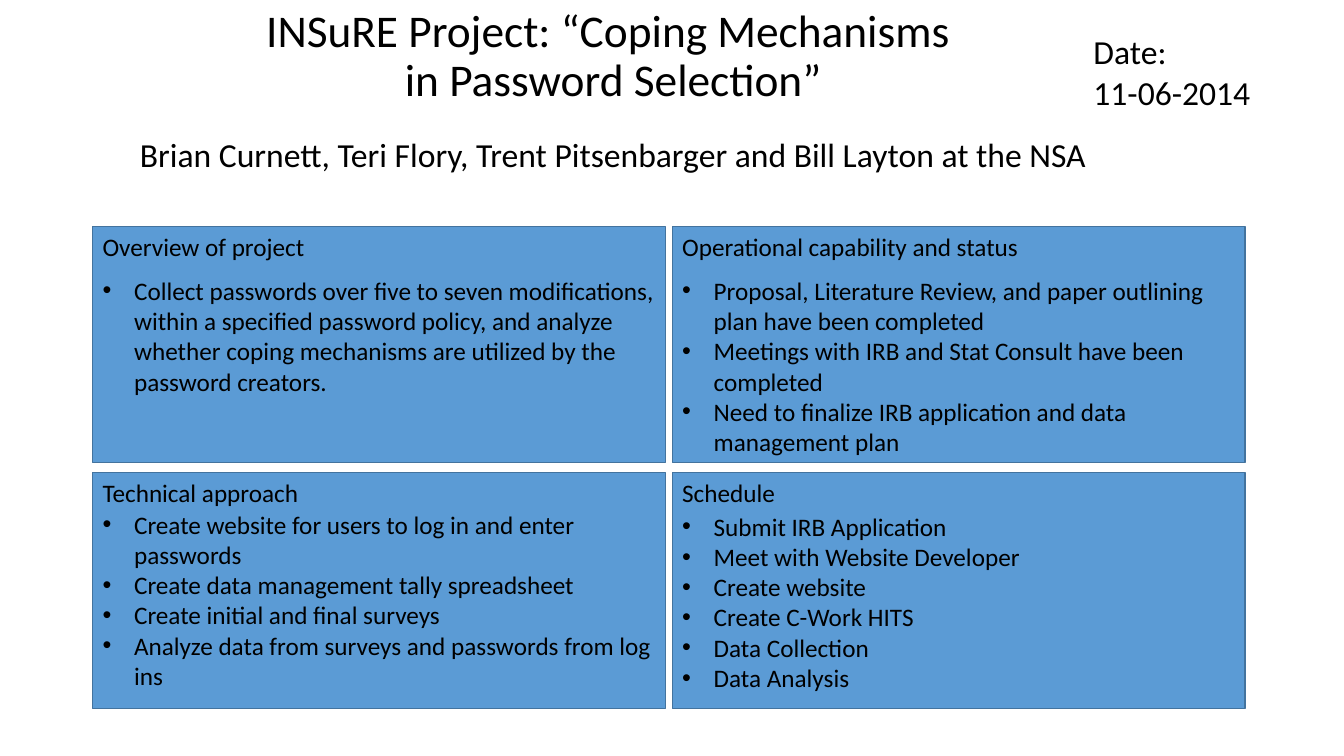
import pptx
import pptx.dml.color
import pptx.enum.shapes
import pptx.enum.text
import pptx.util
from dataclasses import dataclass
from lxml import etree

Pt = pptx.util.Pt
RGB = pptx.dml.color.RGBColor.from_string
ALIGN = pptx.enum.text.PP_ALIGN
ANCHOR = pptx.enum.text.MSO_ANCHOR
AUTO = pptx.enum.text.MSO_AUTO_SIZE


@dataclass(frozen=True)
class Theme:
    font: str = "Calibri"
    ink: str = "000000"
    card: str = "5B9BD5"
    edge: str = "43739E"
    title: float = 32.4
    large: float = 24
    body: float = 18


THEME = Theme()
INDENT = 22.5
HEADING_H = 29
CENTERED = {"alignment": ALIGN.CENTER, "line_spacing": 0.9}

# Heading, gap from card top to bullets, bullet block height, bullets
CARDS = [
    ("Overview of project", 31, 94.5, [
        "Collect passwords over five to seven modifications, within a specified "
        "password policy, and analyze whether coping mechanisms are utilized by "
        "the password creators."]),
    ("Operational capability and status", 31, 138, [
        "Proposal, Literature Review, and paper outlining plan have been completed",
        "Meetings with IRB and Stat Consult have been completed",
        "Need to finalize IRB application and data management plan"]),
    ("Technical approach", 22.3, 138, [
        "Create website for users to log in and enter passwords",
        "Create data management tally spreadsheet",
        "Create initial and final surveys",
        "Analyze data from surveys and passwords from log ins"]),
    ("Schedule", 23.8, 160, [
        "Submit IRB Application",
        "Meet with Website Developer",
        "Create website",
        "Create C-Work HITS",
        "Data Collection",
        "Data Analysis"]),
]


def set_attrs(obj, values):
    for name, value in values.items():
        setattr(obj, name, value)


def add_bullet(p):
    pPr = p._p.get_or_add_pPr()
    pPr.set("marL", str(Pt(INDENT)))
    pPr.set("indent", str(-Pt(INDENT)))
    ns = pptx.oxml.ns.qn
    etree.SubElement(pPr, ns("a:buFont")).set("typeface", "Arial")
    etree.SubElement(pPr, ns("a:buChar")).set("char", "•")


def add_text(shapes, box, lines, size, para=None, frame=None, bullets=False):
    sp = shapes.add_textbox(*map(Pt, box))
    tf = sp.text_frame
    set_attrs(tf, {"word_wrap": True, "auto_size": AUTO.SHAPE_TO_FIT_TEXT,
                   **(frame or {})})
    for i, line in enumerate(lines):
        p = tf.paragraphs[0] if i == 0 else tf.add_paragraph()
        p.text = line
        set_attrs(p, para or {})
        if bullets:
            add_bullet(p)
        for r in p.runs:
            set_attrs(r.font, {"name": THEME.font, "size": Pt(size)})
            r.font.color.rgb = RGB(THEME.ink)


def add_header(s, box):
    x, y, w, h = box
    frame = {"vertical_anchor": ANCHOR.MIDDLE, "auto_size": AUTO.NONE}
    # Title and authors
    add_text(s.shapes, (x, y, w, 57.6),
             ["INSuRE Project: “Coping Mechanisms \nin Password Selection”"],
             THEME.title, CENTERED, frame)
    add_text(s.shapes, (x, y + h - 43.2, w, 43.2),
             ["Brian Curnett, Teri Flory, Trent Pitsenbarger and Bill Layton at the NSA"],
             THEME.large, CENTERED, frame)


def add_date(s, box):
    add_text(s.shapes, box, ["Date:", "11-06-2014"], THEME.large)


def add_card(s, box, heading, gap, body_h, bullets):
    x, y, w, h = box
    # Panel with its heading
    group = s.shapes.add_group_shape()
    sp = group.shapes.add_shape(pptx.enum.shapes.MSO_SHAPE.RECTANGLE, *map(Pt, box))
    sp.shadow.inherit = False
    sp.fill.solid()
    sp.fill.fore_color.rgb = RGB(THEME.card)
    sp.line.color.rgb = RGB(THEME.edge)
    sp.line.width = Pt(1)
    add_text(group.shapes, (x, y, w, HEADING_H), [heading], THEME.body)
    # Bullets
    add_text(s.shapes, (x, y + gap, w, body_h), bullets, THEME.body, bullets=True)


def add_quad(s, box):
    x, y, w, h = box
    gap_x, gap_y = 5, 7.2
    card_w, card_h = (w - gap_x) / 2, (h - gap_y) / 2
    for i, card in enumerate(CARDS):
        row, col = divmod(i, 2)
        add_card(s, (x + col * (card_w + gap_x), y + row * (card_h + gap_y),
                     card_w, card_h), *card)


def main():
    prs = pptx.Presentation()
    set_attrs(prs, {"slide_width": Pt(960), "slide_height": Pt(540)})
    s = prs.slides.add_slide(prs.slide_layouts[6])
    add_header(s, (24, 12, 828, 121.2))
    add_quad(s, (66.2, 162, 823, 344.2))
    add_date(s, (774, 18.7, 151.2, 65.5))
    prs.save("out.pptx")


if __name__ == "__main__":
    main()
